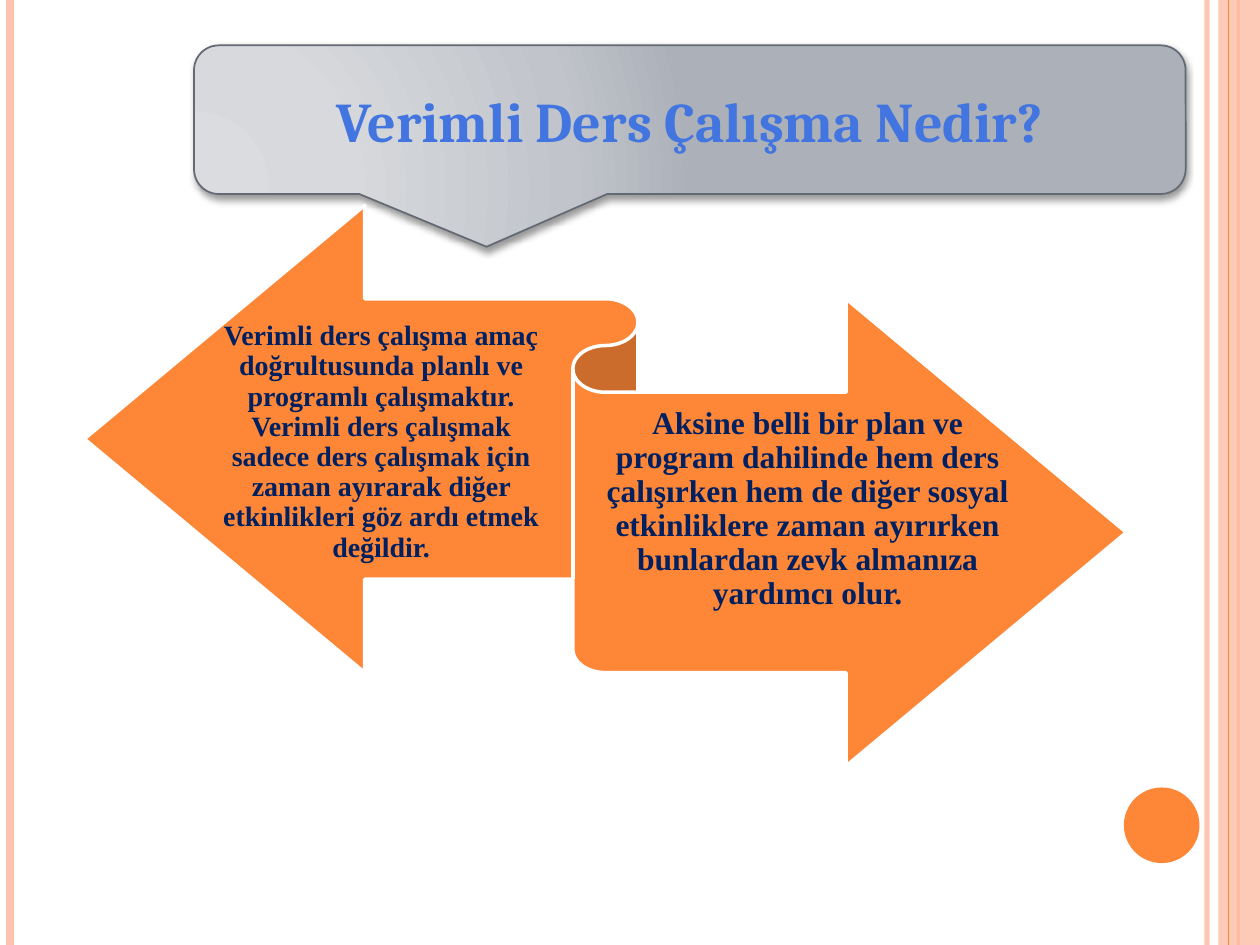
from lxml import etree
from pptx import Presentation
from pptx import util as u
from pptx.dml import color
from pptx.enum import shapes, text
from pptx.oxml import ns

Pt = u.Pt
WIDTH, HEIGHT = 720, 540
COLORS = {"orange": "FE8637", "peach": "FEC3AE", "white": "FFFFFF", "navy": "002060",
          "blue": "4275DF", "slate": "636A74", "black": "000000"}
TITLE = "Verimli Ders Çalışma Nedir?"
CALLOUT_BOX = (110.88, 25.92, 566.64, 84.96)
CALLOUT_GRADIENT = [(0, "DADCE0"), (30, "D7D9DD"), (75, "C1C5CB"), (100, "ABB0B9")]
RIBBON_BOX = (48.24, 117.36, 595.44, 320.4)
# text, box, size, top inset
ARROW_TEXTS = [
    ("Verimli ders çalışma amaç doğrultusunda planlı ve programlı çalışmaktır. "
     "Verimli ders çalışmak sadece ders çalışmak için zaman ayırarak diğer "
     "etkinlikleri göz ardı etmek değildir.", (119.52, 194.4, 196.56, 116.64), 16, 4.3),
    ("Aksine belli bir plan ve program dahilinde hem ders çalışırken hem de diğer "
     "sosyal etkinliklere zaman ayırırken bunlardan zevk almanıza yardımcı olur.",
     (345.6, 232.56, 231.84, 116.64), 18, 5),
]
# x, colour, width, opacity
FRONT_LINES = [(689.76, "peach", 3, 93), (5.76, "peach", 4.5, 100),
               (707.76, "orange", 1.5, 100)]
BAND_BOX = (696.24, 0, 23.76, HEIGHT)
BAND_LINE = (702, "orange", 0.75, 100)
DOT_BOX = (642.24, 450, 43.2, 43.2)


def rgb(name):
    return color.RGBColor.from_string(COLORS[name])


def points(box):
    return [Pt(value) for value in box]


def set_opacity(properties, percent):
    """Make every plain colour under the given shape properties partly transparent."""
    for element in properties.iter(ns.qn("a:srgbClr")):
        etree.SubElement(element, ns.qn("a:alpha"), val=str(percent * 1000))


def add_rule(collection, x, name, width, opacity):
    line = collection.add_connector(shapes.MSO_CONNECTOR.STRAIGHT, Pt(x), 0, Pt(x), Pt(HEIGHT))
    line.line.color.rgb = rgb(name)
    line.line.width = Pt(width)
    properties = line._element.spPr
    if opacity < 100:
        set_opacity(properties, opacity)
    etree.SubElement(properties, ns.qn("a:effectLst"))


def add_filled(collection, kind, box, name):
    shape = collection.add_shape(kind, *points(box))
    shape.shadow.inherit = False
    shape.fill.solid()
    shape.fill.fore_color.rgb = rgb(name)
    shape.line.fill.background()
    return shape


def add_callout(collection):
    callout = add_filled(collection, shapes.MSO_SHAPE.ROUNDED_RECTANGULAR_CALLOUT,
                         CALLOUT_BOX, "white")
    for index, value in enumerate((-0.205, 0.855, 0.167)):
        callout.adjustments[index] = value
    callout.line.color.rgb = rgb("slate")
    callout.line.width = Pt(1)
    properties = callout._element.spPr
    stops = "".join(f'<a:gs pos="{position * 1000}"><a:srgbClr val="{value}"/></a:gs>'
                    for position, value in CALLOUT_GRADIENT)
    gradient = etree.fromstring(
        f'<a:gradFill {ns.nsdecls("a")} rotWithShape="1"><a:gsLst>{stops}</a:gsLst>'
        '<a:path path="circle"><a:fillToRect l="5000" t="100000" r="120000" b="10000"/>'
        '</a:path></a:gradFill>')
    properties.replace(properties.find(ns.qn("a:solidFill")), gradient)
    shadow = etree.SubElement(properties.find(ns.qn("a:effectLst")), ns.qn("a:outerShdw"),
                              blurRad=str(Pt(4)), dist=str(Pt(2)), dir="5400000",
                              rotWithShape="0")
    etree.SubElement(shadow, ns.qn("a:srgbClr"), val=COLORS["black"])
    set_opacity(shadow, 40)


def write_text(shape, content, font_name, size, name):
    frame = shape.text_frame
    frame.text = content
    frame.word_wrap = True
    frame.auto_size = text.MSO_AUTO_SIZE.NONE
    frame.vertical_anchor = text.MSO_ANCHOR.MIDDLE
    paragraph = frame.paragraphs[0]
    paragraph.alignment = text.PP_ALIGN.CENTER
    font = paragraph.runs[0].font
    font.name, font.size, font.bold = font_name, Pt(size), True
    font.color.rgb = rgb(name)


def add_arrow_text(collection, content, box, size, inset):
    textbox = collection.add_textbox(*points(box))
    write_text(textbox, content, "Times New Roman", size, "navy")
    frame = textbox.text_frame
    frame.margin_left = frame.margin_right = 0
    frame.margin_top = frame.margin_bottom = Pt(inset)
    frame.paragraphs[0].line_spacing = 0.9


def main():
    presentation = Presentation()
    presentation.slide_width, presentation.slide_height = Pt(WIDTH), Pt(HEIGHT)
    slide = presentation.slides.add_slide(presentation.slide_layouts[5])
    collection = slide.shapes

    for rule in FRONT_LINES:
        add_rule(collection, *rule)
    band = add_filled(collection, shapes.MSO_SHAPE.RECTANGLE, BAND_BOX, "peach")
    set_opacity(band._element.spPr, 87)
    add_rule(collection, *BAND_LINE)
    add_filled(collection, shapes.MSO_SHAPE.OVAL, DOT_BOX, "orange")

    add_callout(collection)
    title = collection.title
    title.left, title.top, title.width, title.height = points(CALLOUT_BOX)
    write_text(title, TITLE, "Cambria", 32, "blue")
    collection._spTree.append(title._element)  # bring the title in front of its callout

    arrows = collection.add_group_shape().shapes
    ribbon = add_filled(arrows, shapes.MSO_SHAPE.LEFT_RIGHT_RIBBON, RIBBON_BOX, "orange")
    ribbon.line.color.rgb = rgb("white")
    ribbon.line.width = Pt(2)
    for arrow_text in ARROW_TEXTS:
        add_arrow_text(arrows, *arrow_text)

    presentation.save("out.pptx")


if __name__ == "__main__":
    main()
